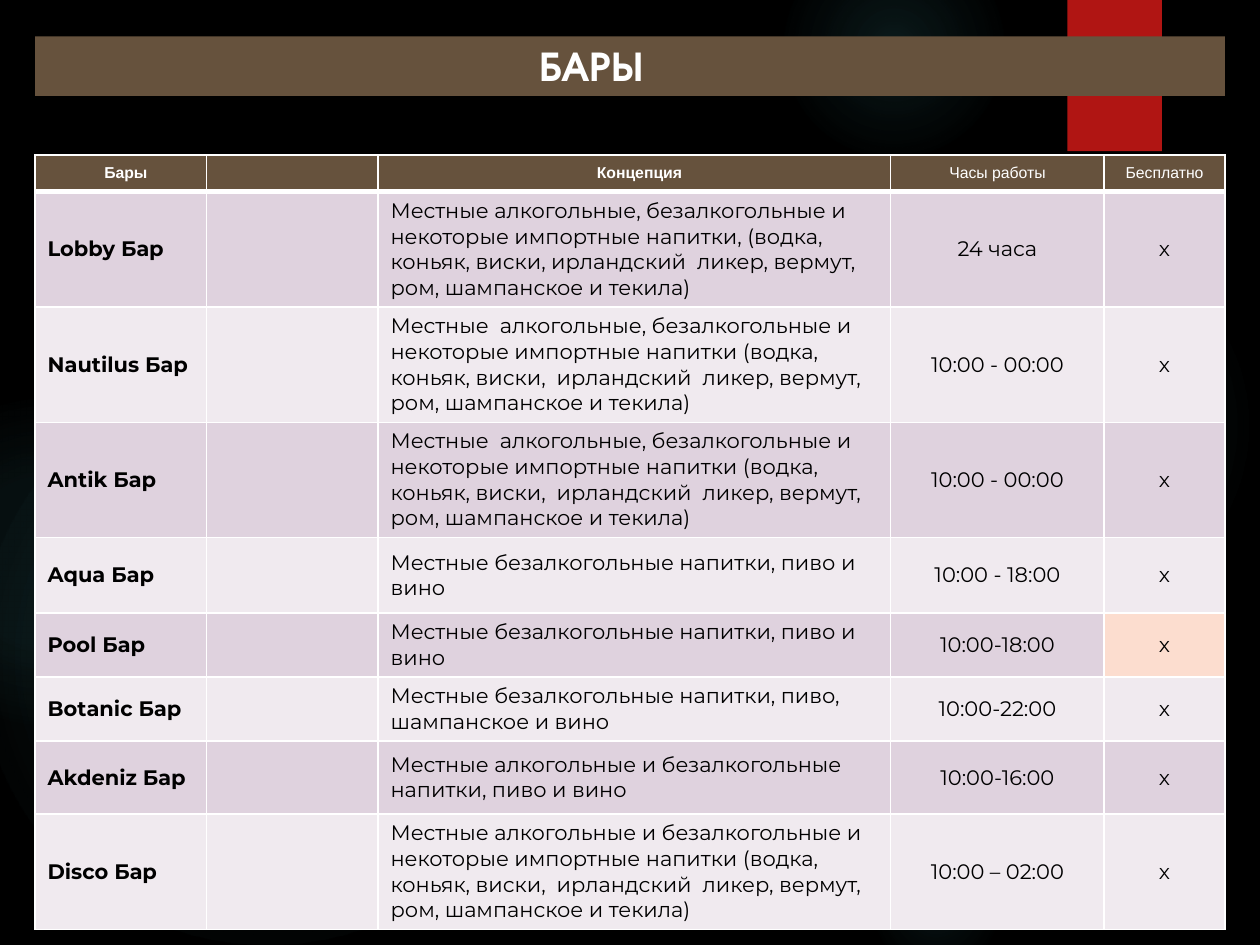
from dataclasses import dataclass
from typing import Any

from lxml import etree
from pptx import Presentation
from pptx.dml.color import RGBColor
from pptx.enum import shapes, text
from pptx.oxml import ns
from pptx.util import Pt

BLACK, WHITE, BROWN, RED = "000000", "FFFFFF", "66523D", "B01513"
GLOW, DARK_BAND, LIGHT_BAND, PEACH = "50B9C1", "DFD2DE", "F0EAEF", "FCDDCF"
LEFT, WIDTH = 20, 680
COLUMN_WIDTHS = (98, 98, 293, 122, 69)
HEADER_HEIGHT = 21
SPIRITS = "ирландский  ликер, вермут, ром, шампанское и текила)"
FULL_BAR = ("Местные  алкогольные, безалкогольные и некоторые импортные напитки "
            "(водка, коньяк, виски,  " + SPIRITS)
SOFT_BAR = "Местные безалкогольные напитки, пиво и вино"


@dataclass
class Glow:
    left: float
    top: float
    size: float
    stops: tuple[tuple[int, int], ...]


@dataclass
class Bar:
    name: str
    concept: str
    hours: str
    height: float
    free_fill: str = ""


@dataclass
class CellStyle:
    fill: str
    font: dict[str, Any]
    alignment: Any = text.PP_ALIGN.LEFT
    top_line: float = 1
    bottom_line: float = 1
    margins: tuple[float, float, float, float] = (7.2, 3.6, 7.2, 3.6)


GLOWS = [
    Glow(496, 132, 222, ((0, 7), (36, 6), (69, 0))),
    Glow(448, -36, 126, ((0, 14), (36, 7), (73, 0))),
    Glow(496, 480, 78, ((0, 9), (36, 5), (66, 0))),
    Glow(-12, 210, 330, ((0, 11), (36, 10), (75, 0))),
    Glow(-66, 228, 186, ((0, 8), (36, 8), (72, 0))),
]

HEADERS = ("Бары", "", "Концепция", "Часы работы", "Бесплатно")

BARS = [
    Bar("Lobby Бар", "Местные алкогольные, безалкогольные и некоторые импортные "
        "напитки, (водка, коньяк, виски, " + SPIRITS, "24 часа", 65.8),
    Bar("Nautilus Бар", FULL_BAR, "10:00 - 00:00", 65.8),
    Bar("Antik Бар", FULL_BAR, "10:00 - 00:00", 65.8),
    Bar("Aqua Бар", SOFT_BAR, "10:00 - 18:00", 43.2),
    Bar("Pool Бар", SOFT_BAR, "10:00-18:00", 36.5, PEACH),
    Bar("Botanic Бар", "Местные безалкогольные напитки, пиво, шампанское и вино",
        "10:00-22:00", 36.5),
    Bar("Akdeniz Бар", "Местные алкогольные и безалкогольные напитки, пиво и вино",
        "10:00-16:00", 41.8),
    Bar("Disco Бар", "Местные алкогольные и безалкогольные и некоторые импортные "
        "напитки (водка, коньяк, виски,  " + SPIRITS, "10:00 – 02:00", 65.8),
]


def color(value: str) -> RGBColor:
    return RGBColor.from_string(value)


def paint(target: Any, value: str) -> None:
    target.fill.solid()
    target.fill.fore_color.rgb = color(value)


def add(parent: Any, tag: str, **attributes: Any) -> Any:
    values = {key: str(value) for key, value in attributes.items()}
    return etree.SubElement(parent, ns.qn(tag), values)


def set_attributes(target: Any, values: dict[str, Any]) -> None:
    for name, value in values.items():
        setattr(target, name, value)


def write(paragraph: Any, content: str, font: dict[str, Any], font_color: str) -> None:
    if not content:
        add(paragraph._p, "a:endParaRPr", sz=int(font["size"].pt * 100))
        return
    run = paragraph.add_run()
    run.text = content
    set_attributes(run.font, font)
    run.font.color.rgb = color(font_color)


def add_plain_shape(slide: Any, kind: Any, left: float, top: float,
                    width: float, height: float) -> Any:
    shape = slide.shapes.add_shape(kind, Pt(left), Pt(top), Pt(width), Pt(height))
    shape.shadow.inherit = False
    shape.line.fill.background()
    return shape


def add_glow(slide: Any, glow: Glow) -> None:
    shape = add_plain_shape(slide, shapes.MSO_SHAPE.OVAL, glow.left, glow.top,
                            glow.size, glow.size)
    gradient = etree.Element(ns.qn("a:gradFill"), rotWithShape="1")
    stops = add(gradient, "a:gsLst")
    for position, opacity in glow.stops:
        stop = add(stops, "a:gs", pos=position * 1000)
        add(add(stop, "a:srgbClr", val=GLOW), "a:alpha", val=opacity * 1000)
    circle = add(gradient, "a:path", path="circle")
    add(circle, "a:fillToRect", l=50000, t=50000, r=50000, b=50000)
    shape._element.spPr.find(ns.qn("a:prstGeom")).addnext(gradient)


def add_title(slide: Any) -> None:
    title = slide.shapes.title
    slide.shapes._spTree.append(title._element)
    set_attributes(title, {"left": Pt(LEFT), "top": Pt(20.8),
                           "width": Pt(WIDTH), "height": Pt(34)})
    paint(title, BROWN)
    frame = title.text_frame
    set_attributes(frame, {
        "word_wrap": True, "auto_size": text.MSO_AUTO_SIZE.NONE,
        "vertical_anchor": text.MSO_ANCHOR.BOTTOM, "margin_left": Pt(288),
        "margin_right": Pt(7.2), "margin_top": Pt(3.6), "margin_bottom": Pt(3.6)})
    paragraph = frame.paragraphs[0]
    paragraph.alignment = text.PP_ALIGN.LEFT
    font = {"name": "TeX Gyre Adventor", "size": Pt(24), "bold": True}
    write(paragraph, "БАРЫ", font, WHITE)


def fill_cell(cell: Any, content: str, style: CellStyle, font_color: str) -> None:
    properties = cell._tc.get_or_add_tcPr()
    lines = {"a:lnL": 1, "a:lnR": 1, "a:lnT": style.top_line, "a:lnB": style.bottom_line}
    for tag, width in lines.items():
        line = add(properties, tag, w=int(Pt(width)))
        add(add(line, "a:solidFill"), "a:srgbClr", val=WHITE)
    paint(cell, style.fill)
    cell.vertical_anchor = text.MSO_ANCHOR.MIDDLE
    sides = ("margin_left", "margin_top", "margin_right", "margin_bottom")
    set_attributes(cell, {side: Pt(value) for side, value in zip(sides, style.margins)})
    paragraph = cell.text_frame.paragraphs[0]
    paragraph.alignment = style.alignment
    write(paragraph, content, style.font, font_color)


def add_bar_table(slide: Any) -> None:
    heights = [HEADER_HEIGHT] + [bar.height for bar in BARS]
    table = slide.shapes.add_table(len(heights), len(COLUMN_WIDTHS), Pt(LEFT), Pt(88.6),
                                   Pt(WIDTH), Pt(sum(heights))).table
    set_attributes(table, {"first_row": False, "horz_banding": False})
    for column, width in zip(table.columns, COLUMN_WIDTHS):
        column.width = Pt(width)
    for row, height in zip(table.rows, heights):
        row.height = Pt(height)

    for index, header in enumerate(HEADERS):
        font = {"name": "Arial", "size": Pt(9), "bold": index < 3}
        margins = (5.8, 0, 0, 0) if index < 3 else (7.2, 3.6, 7.2, 3.6)
        style = CellStyle(BROWN, font, text.PP_ALIGN.CENTER, bottom_line=3, margins=margins)
        fill_cell(table.cell(0, index), header, style, WHITE)

    for row, bar in enumerate(BARS, start=1):
        band = DARK_BAND if row % 2 else LIGHT_BAND
        for index, content in enumerate((bar.name, "", bar.concept, bar.hours, "x")):
            font = {"name": "Montserrat", "size": Pt(12), "bold": index == 0}
            fill = bar.free_fill if index == 4 and bar.free_fill else band
            alignment = text.PP_ALIGN.CENTER if index > 2 else text.PP_ALIGN.LEFT
            style = CellStyle(fill, font, alignment, top_line=3 if row == 1 else 1)
            fill_cell(table.cell(row, index), content, style, BLACK)


def main() -> None:
    presentation = Presentation()
    set_attributes(presentation, {"slide_width": Pt(720), "slide_height": Pt(540)})
    slide = presentation.slides.add_slide(presentation.slide_layouts[5])
    paint(slide.background, BLACK)
    for glow in GLOWS:
        add_glow(slide, glow)
    ribbon = add_plain_shape(slide, shapes.MSO_SHAPE.RECTANGLE, 610, 0, 54, 86.4)
    paint(ribbon, RED)
    add_title(slide)
    add_bar_table(slide)
    presentation.save("out.pptx")


if __name__ == "__main__":
    main()
